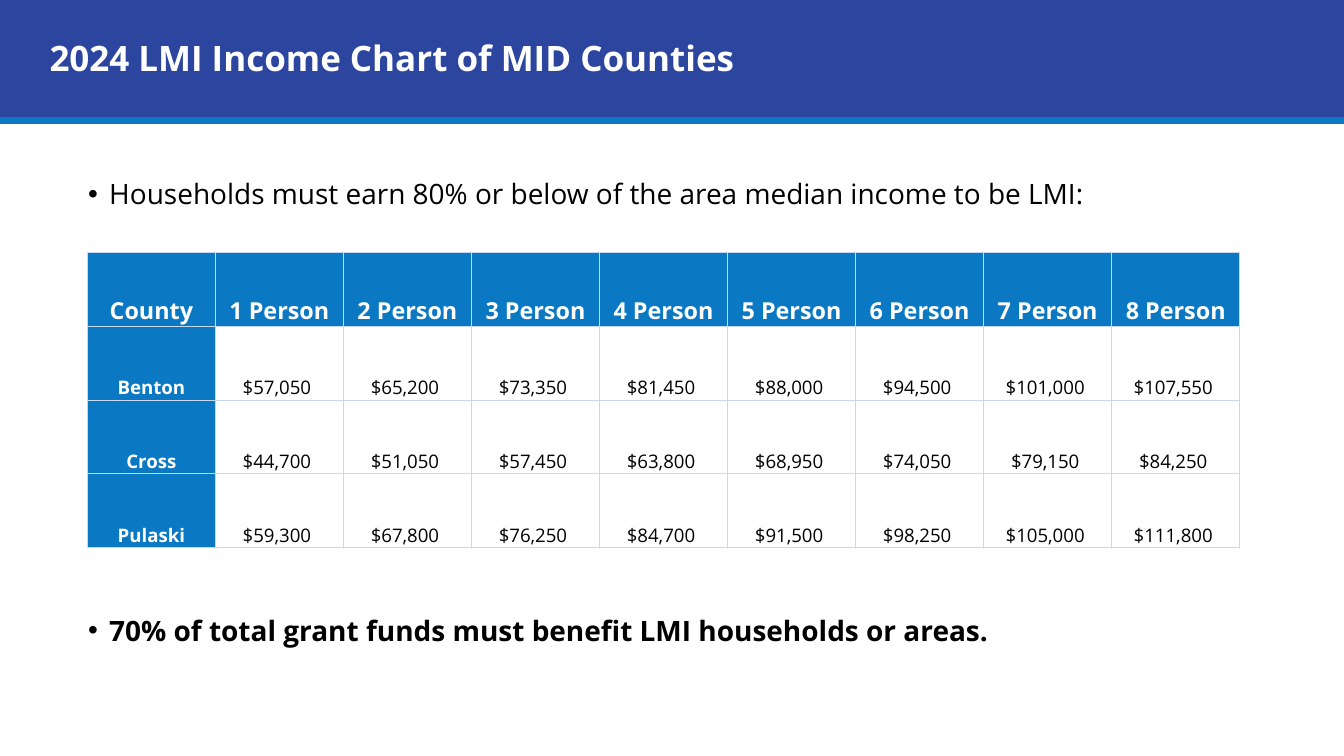
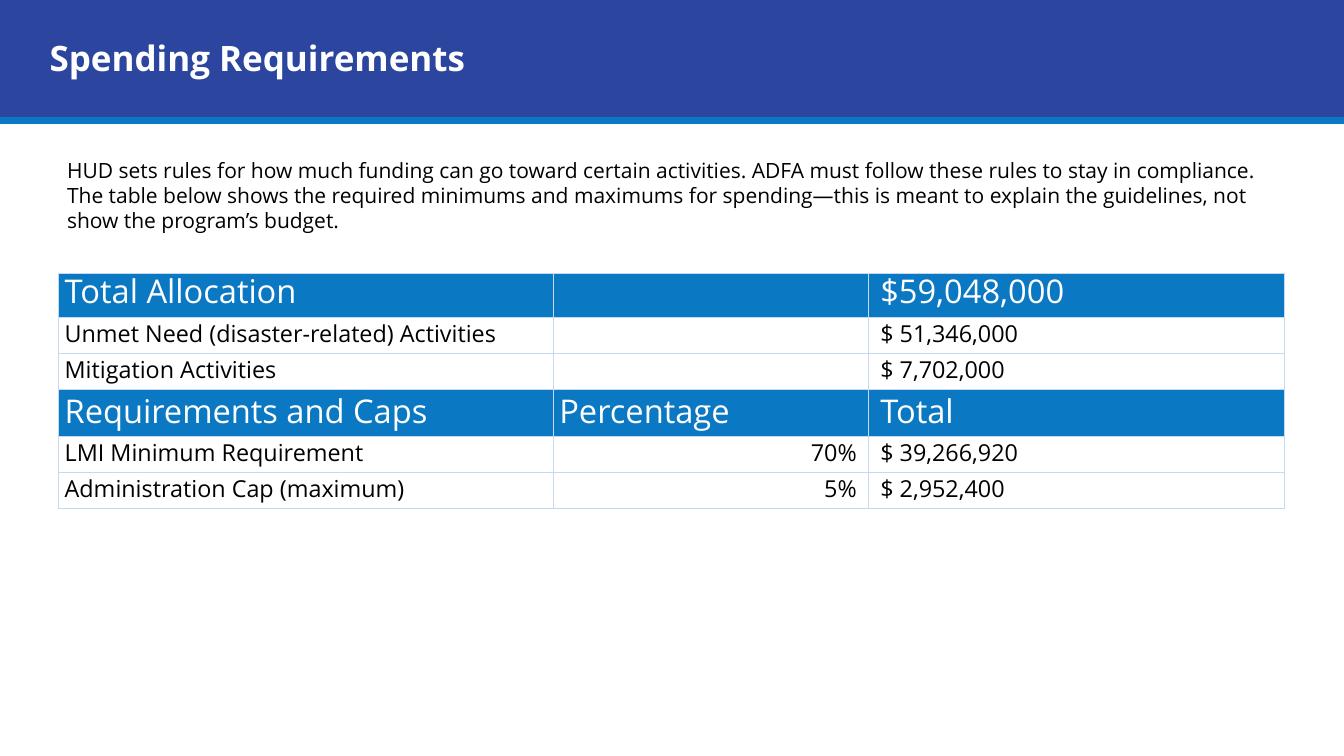
"""Build two slides on income limits and spending requirements."""
from pptx import Presentation
from pptx import util as u
from pptx.dml.color import RGBColor
from pptx.enum import shapes, text
from pptx.oxml import parse_xml
from pptx.oxml.ns import nsdecls
from lxml import etree

NAVY = RGBColor(0x2C, 0x45, 0x9F)
BLUE = RGBColor(0x0A, 0x78, 0xC2)
PALE = RGBColor(0xC6, 0xD9, 0xF1)
WHITE = RGBColor(0xFF, 0xFF, 0xFF)
BLACK = RGBColor(0, 0, 0)
FONT = "Open Sans"
A = "http://schemas.openxmlformats.org/drawingml/2006/main"

INCOME_TITLE = "2024 LMI Income Chart of MID Counties"
INCOME_BULLETS = [
    ("Households must earn 80% or below of the area median income to be LMI:",
     (104, 205, 1372, 44), dict(spacing=1.09)),
    ("70% of total grant funds must benefit LMI households or areas.",
     (104, 728, 1372, 42), dict(bold=True)),
]
INCOME_BOX = (104, 301, 1372, 351)
INCOME_ROWS = [
    ["County"] + [f"{n} Person" for n in range(1, 9)],
    ["Benton", "$57,050", "$65,200", "$73,350", "$81,450",
     "$88,000", "$94,500", "$101,000", "$107,550"],
    ["Cross", "$44,700", "$51,050", "$57,450", "$63,800",
     "$68,950", "$74,050", "$79,150", "$84,250"],
    ["Pulaski", "$59,300", "$67,800", "$76,250", "$84,700",
     "$91,500", "$98,250", "$105,000", "$111,800"],
]

SPENDING_TITLE = "Spending Requirements"
SPENDING_INTRO = (
    "HUD sets rules for how much funding can go toward certain activities. "
    "ADFA must follow these rules to stay in compliance. The table below shows "
    "the required minimums and maximums for spending—this is meant to explain "
    "the guidelines, not show the program’s budget.")
INTRO_BOX = (70, 182, 1467, 101)
SPENDING_BOX = (70, 325, 1459, 282)
SPENDING_WIDTHS = [589, 375, 495]
SPENDING_HEIGHTS = [53, 43, 43, 56, 43, 43]
SPENDING_HEADINGS = (0, 3)
SPENDING_ROWS = [
    ["Total Allocation", "", "$59,048,000"],
    ["Unmet Need (disaster-related) Activities", "", "$ 51,346,000"],
    ["Mitigation Activities", "", "$ 7,702,000"],
    ["Requirements and Caps", "Percentage", "Total"],
    ["LMI Minimum Requirement", "70%", "$ 39,266,920"],
    ["Administration Cap (maximum)", "5%", "$ 2,952,400"],
]


def px(n):
    return u.Emu(n * 9144)


def place(shape, box):
    shape.left, shape.top, shape.width, shape.height = map(px, box)


def margins(frame, left, top, right, bottom):
    frame.margin_left, frame.margin_top = px(left), px(top)
    frame.margin_right, frame.margin_bottom = px(right), px(bottom)


def write(tf, words, size=24, color=BLACK, bold=False, align=None,
          spacing=None, bullet=False):
    p = tf.paragraphs[0]
    if bullet:
        pPr = p._p.get_or_add_pPr()
        pPr.set("marL", str(px(26)))
        pPr.set("indent", str(px(-25)))
        etree.SubElement(pPr, f"{{{A}}}buChar", char="•")
    p.space_before = u.Pt(0)
    p.alignment = align
    p.line_spacing = spacing
    if words:
        r = p.add_run()
        r.text = words
        r.font.name, r.font.size, r.font.bold = FONT, u.Pt(size), bold
        r.font.color.rgb = color


def fill_placeholder(ph, words, box, inset, **fmt):
    place(ph, box)
    tf = ph.text_frame
    tf.word_wrap = True
    tf.auto_size = text.MSO_AUTO_SIZE.NONE
    tf.vertical_anchor = text.MSO_ANCHOR.TOP
    margins(tf, *inset)
    write(tf, words, **fmt)


def add_slide(prs, layout, title):
    s = prs.slides.add_slide(prs.slide_layouts.get_by_name(layout))
    band = s.shapes.add_shape(shapes.MSO_SHAPE.RECTANGLE, 0, 0, px(1600), px(142))
    band.shadow.inherit = False
    band.fill.solid()
    band.fill.fore_color.rgb = NAVY
    band.line.fill.background()
    s.shapes.element.insert(2, band.element)
    rule = s.shapes.add_connector(shapes.MSO_CONNECTOR.STRAIGHT,
                                  0, px(143), px(1600), px(143))
    rule.line.color.rgb, rule.line.width = BLUE, u.Pt(6)
    etree.SubElement(rule.element.spPr, f"{{{A}}}effectLst")
    fill_placeholder(s.shapes.title, title, (56, 43, 1412, 52), (3, 1, 0, 0),
                     size=30, color=WHITE, bold=True, align=text.PP_ALIGN.LEFT)
    return s


def add_borders(cell):
    tcPr = cell._tc.get_or_add_tcPr()
    for i, side in enumerate(("lnL", "lnR", "lnT", "lnB")):
        tcPr.insert(i, parse_xml(
            f'<a:{side} {nsdecls("a")} w="12700"><a:solidFill>'
            f'<a:srgbClr val="{PALE}"/></a:solidFill></a:{side}>'))


def add_table(s, rows, box, cell_format):
    table = s.shapes.add_table(len(rows), len(rows[0]), *map(px, box)).table
    table.first_row = table.horz_banding = False
    for i, row in enumerate(rows):
        for j, words in enumerate(row):
            cell = table.cell(i, j)
            fill, inset, fmt = cell_format(i, j)
            cell.vertical_anchor = text.MSO_ANCHOR.BOTTOM
            margins(cell, *inset)
            if fill is None:
                cell.fill.background()
            else:
                cell.fill.solid()
                cell.fill.fore_color.rgb = fill
            add_borders(cell)
            write(cell.text_frame, words, **fmt)
    return table


def income_cell(i, j):
    head = i == 0 or j == 0
    fmt = dict(size=20 if i == 0 else 16, color=WHITE if head else BLACK,
               bold=head, align=text.PP_ALIGN.CENTER)
    return BLUE if head else None, (1, 1, 1 if head else 7, 0), fmt


def spending_cell(i, j):
    head = i in SPENDING_HEADINGS
    right = j == 1 and not head
    fmt = dict(size=28 if head else 20, color=WHITE if head else BLACK,
               align=text.PP_ALIGN.RIGHT if right else None,
               spacing=u.Pt(12.8))
    inset = (14 if j == 2 else 7, 5, 14 if right else 7, 5)
    return BLUE if head else WHITE, inset, fmt


def income_slide(prs):
    s = add_slide(prs, "Two Content", INCOME_TITLE)
    bodies = [ph for ph in s.placeholders if ph.placeholder_format.idx > 0]
    for ph, (words, box, fmt) in zip(bodies, INCOME_BULLETS):
        fill_placeholder(ph, words, box, (0, 2, 0, 0), bullet=True, **fmt)
    add_table(s, INCOME_ROWS, INCOME_BOX, income_cell)


def spending_slide(prs):
    s = add_slide(prs, "Title Only", SPENDING_TITLE)
    tf = s.shapes.add_textbox(*map(px, INTRO_BOX)).text_frame
    tf.word_wrap = True
    write(tf, SPENDING_INTRO, size=18)
    table = add_table(s, SPENDING_ROWS, SPENDING_BOX, spending_cell)
    for column, width in zip(table.columns, SPENDING_WIDTHS):
        column.width = px(width)
    for row, height in zip(table.rows, SPENDING_HEIGHTS):
        row.height = px(height)


def main():
    prs = Presentation()
    prs.slide_width, prs.slide_height = px(1600), px(900)
    income_slide(prs)
    spending_slide(prs)
    prs.save("out.pptx")


if __name__ == "__main__":
    main()
